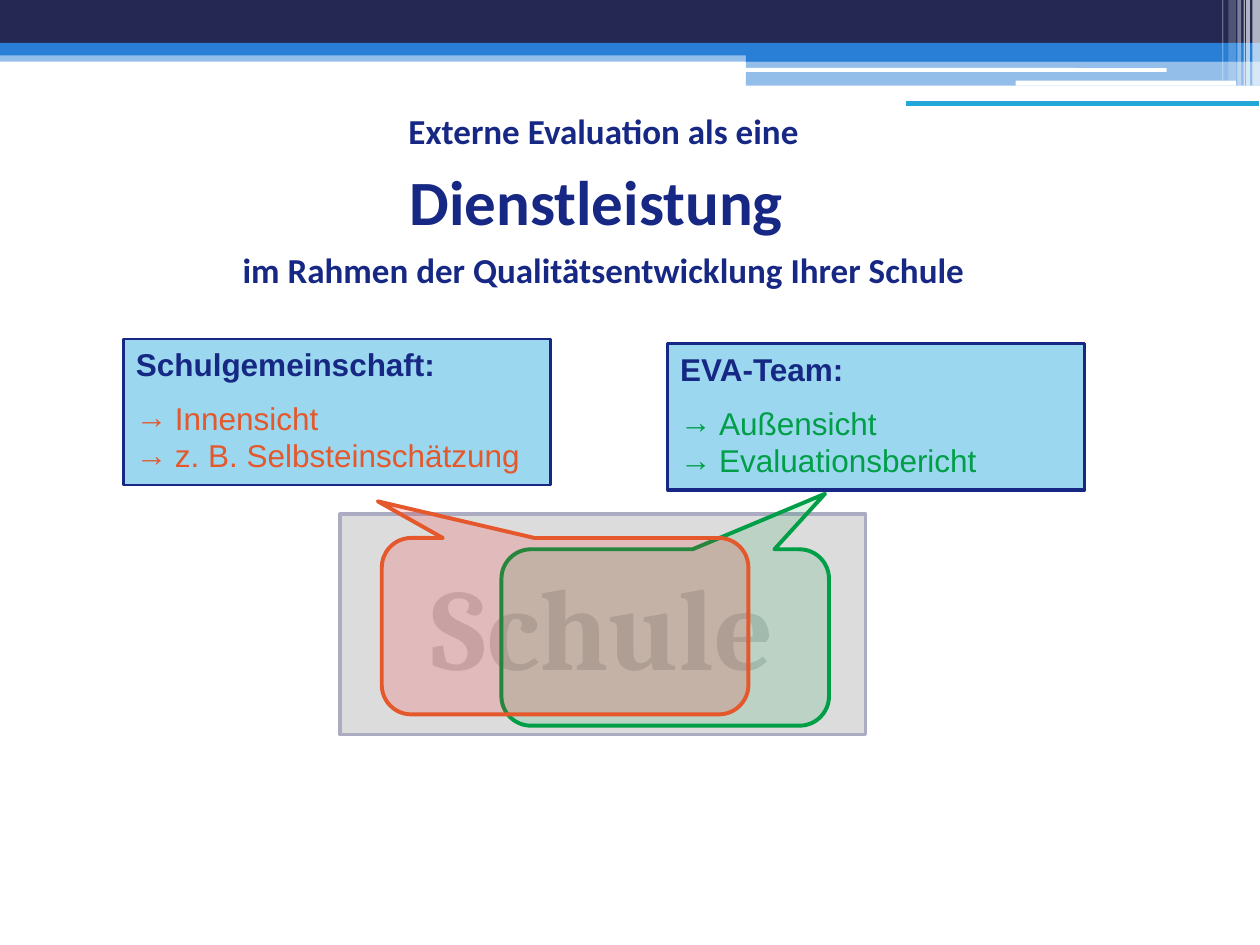
"""Build the slide on external evaluation as a service for schools."""
from lxml import etree
from pptx import Presentation
from pptx.dml.color import RGBColor
from pptx.enum.shapes import MSO_CONNECTOR, MSO_SHAPE
from pptx.enum.text import MSO_ANCHOR, MSO_AUTO_SIZE, PP_ALIGN
from pptx.oxml.ns import qn
from pptx.util import Inches, Pt

RECT, ROUNDED = MSO_SHAPE.RECTANGLE, MSO_SHAPE.ROUNDED_RECTANGLE
CALLOUT = MSO_SHAPE.ROUNDED_RECTANGULAR_CALLOUT
STRAIGHT = MSO_CONNECTOR.STRAIGHT
TOP, MIDDLE = MSO_ANCHOR.TOP, MSO_ANCHOR.MIDDLE
LEFT, CENTER = PP_ALIGN.LEFT, PP_ALIGN.CENTER
NO_AUTOFIT = MSO_AUTO_SIZE.NONE

THEME = {
    "night": "242852", "blue": "297FD5", "white": "FFFFFF", "accent": "23A7D9",
    "navy": "162883", "sky": "9BD7EF", "orange": "E4582C", "green": "009E47",
    "red": "FF0000", "gray": "808080", "frame": "ABACC1", "word": "BFBFBF",
    "title font": "Calibri", "body font": "Arial", "word font": "Cambria",
    "title": 20, "emphasis": 36, "body": 18, "word size": 66,
}

TITLE_BOX = (1.72, 0.82, 6.14, 1.55)
TITLE_LINES = [
    ("Externe Evaluation als eine", "title"),
    ("Dienstleistung ", "emphasis"),
    ("im Rahmen der Qualitätsentwicklung Ihrer Schule", "title"),
]
BANDS = [
    (RECT, (0, 0.4, 10, 0.09), "blue", 50),
    (RECT, (0, 0, 10, 0.34), "night", 100),
    (RECT, (0, 0.34, 10, 0.1), "blue", 100),
    (RECT, (5.92, 0.39, 4.08, 0.1), "blue", 100),
    (RECT, (5.92, 0.48, 4.08, 0.2), "blue", 50),
    (ROUNDED, (5.91, 0.54, 3.35, 0.03), "white", 100),
    (ROUNDED, (8.06, 0.64, 1.75, 0.04), "white", 100),
]
STRIPES = [
    (9.94, 0.06, 0.68, 65), (9.89, 0.03, 0.68, 65), (9.87, 0.01, 0.68, 60),
    (9.82, 0.03, 0.68, 40), (9.75, 0.06, 0.64, 20), (9.7, 0.01, 0.64, 30),
]
SCHOOL = ("Schule", (2.7, 4.08, 4.17, 1.75))
VIEWS = [
    ("Schulgemeinschaft:", ["Innensicht", "z. B. Selbsteinschätzung"],
     "orange", (0.98, 2.69, 3.39, 1.16), 1.5),
    ("EVA-Team:", ["Außensicht", "Evaluationsbericht"],
     "green", (5.3, 2.73, 3.31, 1.16), 1.75),
]
CALLOUTS = [
    ((3.98, 4.36, 2.6, 1.4), (0.488, -0.815, 0.167), "green", "green"),
    ((3.03, 4.27, 2.91, 1.4), (-0.511, -0.708, 0.167), "red", "orange"),
]
ACCENT_LINE = (7.19, 0.82, 9.99, 0.82)


def color(name):
    return RGBColor.from_string(THEME[name])


def add_panel(slide, kind, box, fill, opacity=100, line=None, width=0):
    panel = slide.shapes.add_shape(kind, *map(Inches, box))
    panel.shadow.inherit = False
    panel.fill.solid()
    panel.fill.fore_color.rgb = color(fill)
    if opacity < 100:
        srgb = panel.fill._xPr.find(".//" + qn("a:srgbClr"))
        etree.SubElement(srgb, qn("a:alpha"), val=str(opacity * 1000))
    if line:
        panel.line.color.rgb = color(line)
        panel.line.width = Pt(width)
    else:
        panel.line.fill.background()
    return panel


def write(shape, lines, align, anchor):
    """Write lines of (text, font, size, color, bold, space before)."""
    frame = shape.text_frame
    frame.text = "\n".join(line[0] for line in lines)
    frame.word_wrap = True
    frame.auto_size = NO_AUTOFIT
    frame.vertical_anchor = anchor
    for paragraph, (_, font, size, ink, bold, before) in zip(frame.paragraphs, lines):
        paragraph.alignment = align
        paragraph.space_before = Pt(before)
        style = paragraph.runs[0].font
        style.name, style.size, style.bold = THEME[font], Pt(THEME[size]), bold
        style.color.rgb = color(ink)
    return frame.paragraphs


def add_arrow_bullet(paragraph):
    properties = paragraph._p.get_or_add_pPr()
    indent = Inches(0.31)
    properties.set("marL", str(indent))
    properties.set("indent", str(-indent))
    etree.SubElement(properties, qn("a:buFont"), typeface=THEME["body font"])
    etree.SubElement(properties, qn("a:buChar"), char="→")


def add_view(slide, heading, points, ink, box, width):
    panel = add_panel(slide, RECT, box, "sky", line="navy", width=width)
    lines = [(heading, "body font", "body", "navy", True, 9)]
    lines += [(point, "body font", "body", ink, False, 0 if i else 9)
              for i, point in enumerate(points)]
    for paragraph in write(panel, lines, LEFT, TOP)[1:]:
        add_arrow_bullet(paragraph)


def main():
    deck = Presentation()
    deck.slide_width, deck.slide_height = Inches(10), Inches(7.5)
    slide = deck.slides.add_slide(deck.slide_layouts[5])

    title = slide.shapes.title
    title.left, title.top, title.width, title.height = map(Inches, TITLE_BOX)
    write(title, [(text, "title font", size, "navy", True, 6 if i else 0)
                  for i, (text, size) in enumerate(TITLE_LINES)], CENTER, TOP)

    for kind, box, fill, opacity in BANDS:
        add_panel(slide, kind, box, fill, opacity)
    for left, width, height, opacity in STRIPES:
        add_panel(slide, RECT, (left, 0, width, height), "white", opacity)

    word, box = SCHOOL
    school = add_panel(slide, RECT, box, "gray", 27, "frame", 2)
    write(school, [(word, "word font", "word size", "word", True, 0)], CENTER, MIDDLE)

    for view in VIEWS:
        add_view(slide, *view)
    for box, adjustments, fill, line in CALLOUTS:
        callout = add_panel(slide, CALLOUT, box, fill, 15, line, 2.25)
        for i, value in enumerate(adjustments):
            callout.adjustments[i] = value

    accent = slide.shapes.add_connector(STRAIGHT, *map(Inches, ACCENT_LINE))
    accent.line.color.rgb = color("accent")
    accent.line.width = Pt(3)
    etree.SubElement(accent._element.spPr, qn("a:effectLst"))

    deck.save("out.pptx")


if __name__ == "__main__":
    main()
